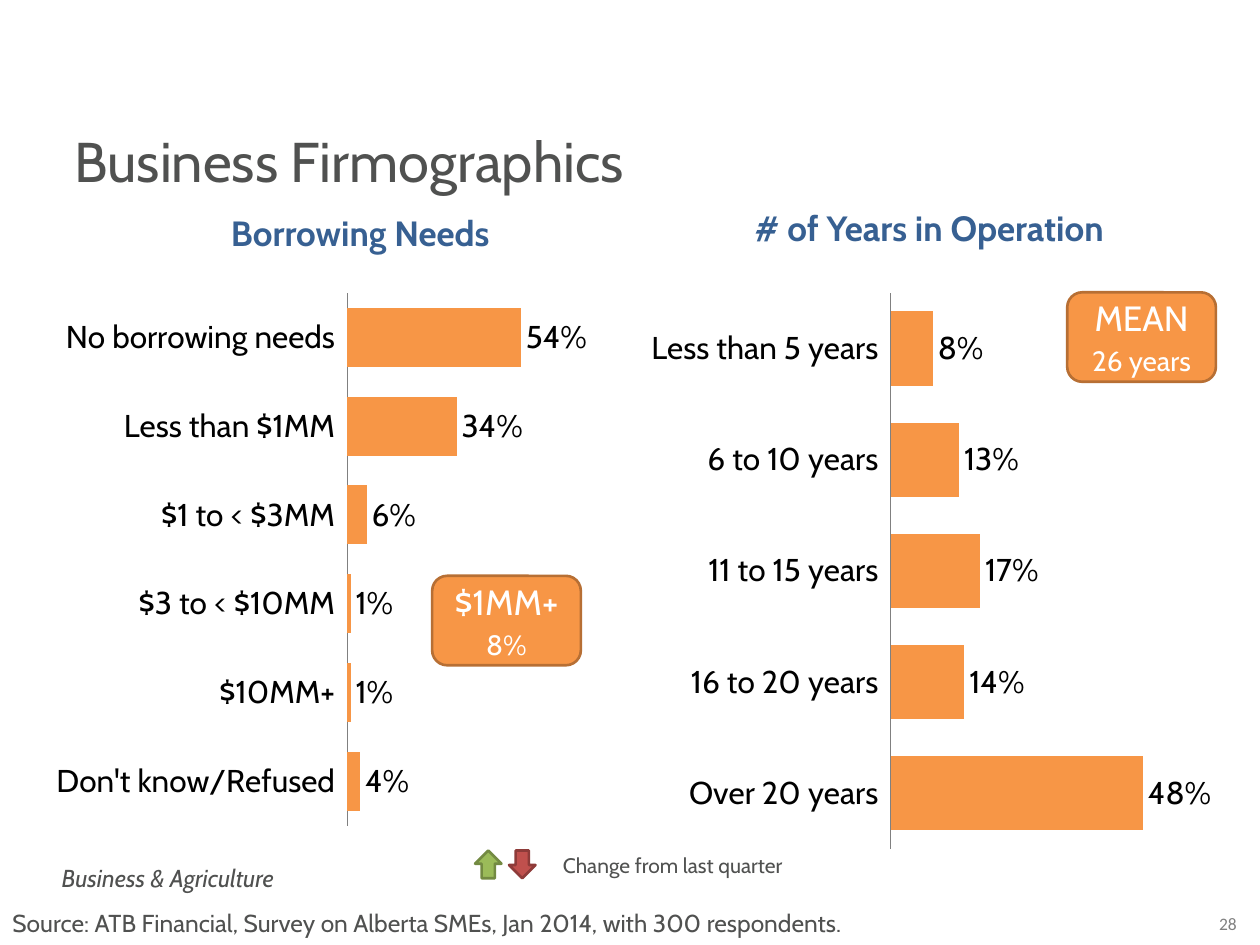
from lxml import etree
from pptx import Presentation
from pptx.chart.data import CategoryChartData
from pptx.dml.color import RGBColor
from pptx.enum.chart import XL_CHART_TYPE, XL_LABEL_POSITION, XL_TICK_LABEL_POSITION, XL_TICK_MARK
from pptx.enum.shapes import MSO_SHAPE
from pptx.enum.text import MSO_ANCHOR, PP_ALIGN
from pptx.oxml.ns import qn
from pptx.util import Inches, Pt

LEFT, CENTER = PP_ALIGN.LEFT, PP_ALIGN.CENTER
TOP, MIDDLE = MSO_ANCHOR.TOP, MSO_ANCHOR.MIDDLE
BAR_CLUSTERED = XL_CHART_TYPE.BAR_CLUSTERED
OUTSIDE_END = XL_LABEL_POSITION.OUTSIDE_END
NO_TICKS = XL_TICK_MARK.NONE
LABELS_LOW = XL_TICK_LABEL_POSITION.LOW

FONT = "Cabin"
GREY, BLUE, ORANGE, WHITE = "505150", "376092", "F79646", "FFFFFF"

TITLE = ("Business Firmographics", (0.49, 0.95, 5.84, 0.64))

# plot: left, top, width and height as shares of the chart
CHARTS = [
    {"place": (4.15, 2.32, 5.84, 4.6), "plot": (0.5, 0, 0.5, 0.96),
     "rows": [("Less than 5 years", 0.08), ("6 to 10 years", 0.13),
              ("11 to 15 years", 0.17), ("16 to 20 years", 0.14),
              ("Over 20 years", 0.48)]},
    {"place": (0.42, 2.32, 4.25, 4.41), "plot": (0.55, 0, 0.42, 0.96),
     "rows": [("No borrowing needs", 0.54), ("Less than $1MM", 0.34),
              ("$1 to < $3MM", 0.06), ("$3 to < $10MM", 0.01),
              ("$10MM+", 0.01), ("Don't know/Refused", 0.04)]},
]

TEXTS = [
    ("Borrowing Needs", (1.58, 1.63, 2.56, 0.44),
     {"size": 20, "color": BLUE, "bold": True, "align": CENTER}),
    ("# of Years in Operation", (5.58, 1.59, 3.59, 0.44),
     {"size": 20, "color": BLUE, "bold": True, "align": CENTER}),
    ("Business & Agriculture", (0.39, 6.8, 2.81, 0.34), {"size": 14, "italic": True}),
    ("Source: ATB Financial, Survey on Alberta SMEs, Jan 2014, with 300 respondents.",
     (0, 7.16, 7.09, 0.34), {"size": 14}),
    ("Change from last quarter", (4.37, 6.72, 2.4, 0.31), {"size": 12}),
    ("28", (9.5, 7.2, 0.49, 0.27),
     {"size": 10, "font": "Calibri", "color": "808080", "align": CENTER}),
]

CALLOUTS = [("$1MM+", "8%", 3.43, 4.57), ("MEAN", "26 years", 8.47, 2.32)]
CALLOUT_SIZE = (1.18, 0.71)

ARROWS = [
    (MSO_SHAPE.UP_ARROW, 3.77, "9BBB59", "738A42"),
    (MSO_SHAPE.DOWN_ARROW, 4.04, "C0504D", "8E3B39"),
]


def rgb(color):
    return RGBColor.from_string(color)


def inches(place):
    return [Inches(length) for length in place]


def write(paragraph, text, size=14, font=FONT, color=GREY, bold=False,
          italic=False, align=LEFT, before=0):
    paragraph.alignment = align
    paragraph.space_before = Pt(before)
    span = paragraph.add_run()
    span.text = text
    span.font.size = Pt(size)
    span.font.name = font
    span.font.color.rgb = rgb(color)
    span.font.bold = bold
    span.font.italic = italic


def add_text(page, text, place, **style):
    frame = page.shapes.add_textbox(*inches(place)).text_frame
    frame.word_wrap = True
    write(frame.paragraphs[0], text, **style)


def add_outlined(page, kind, place, fill, line):
    shape = page.shapes.add_shape(kind, *inches(place))
    shape.shadow.inherit = False
    shape.fill.solid()
    shape.fill.fore_color.rgb = rgb(fill)
    shape.line.color.rgb = rgb(line)
    shape.line.width = Pt(1.5)
    return shape


def add_callout(page, heading, value, left, top):
    box = add_outlined(page, MSO_SHAPE.ROUNDED_RECTANGLE,
                       (left, top, *CALLOUT_SIZE), ORANGE, "B76F34")
    frame = box.text_frame
    frame.vertical_anchor = MIDDLE
    write(frame.paragraphs[0], heading, size=20, color=WHITE, align=CENTER)
    write(frame.add_paragraph(), value, size=16, color=WHITE, align=CENTER, before=3)


def place_plot(chart, plot):
    """Fix the inner plot area, which python-pptx cannot position itself."""
    area = chart._chartSpace.find(".//" + qn("c:plotArea"))
    for old in area.findall(qn("c:layout")):
        area.remove(old)
    layout = etree.Element(qn("c:layout"))
    manual = etree.SubElement(layout, qn("c:manualLayout"))
    settings = [("layoutTarget", "inner"), ("xMode", "edge"), ("yMode", "edge"),
                *zip("xywh", plot)]
    for name, value in settings:
        etree.SubElement(manual, qn("c:" + name)).set("val", str(value))
    area.insert(0, layout)


def add_bars(page, place, plot, rows):
    data = CategoryChartData(number_format="0%")
    data.categories = [name for name, _ in rows]
    data.add_series("Series 1", [value for _, value in rows])
    chart = page.shapes.add_chart(BAR_CLUSTERED, *inches(place), data).chart
    chart.has_title = False
    chart.has_legend = False
    chart.font.name = FONT
    chart.font.size = Pt(18)
    chart.font.color.rgb = rgb("000000")

    categories = chart.category_axis
    categories.reverse_order = True
    categories.major_tick_mark = NO_TICKS
    categories.tick_label_position = LABELS_LOW
    categories.format.line.color.rgb = rgb("808080")
    values = chart.value_axis
    values.minimum_scale, values.maximum_scale = 0, 0.7
    values.has_major_gridlines = False
    values.visible = False

    bars = chart.plots[0]
    bars.gap_width = 50
    bars.vary_by_categories = False
    bars.series[0].format.fill.solid()
    bars.series[0].format.fill.fore_color.rgb = rgb(ORANGE)
    bars.has_data_labels = True
    labels = bars.data_labels
    labels.show_value = True
    labels.number_format = "0%"
    labels.number_format_is_linked = False
    labels.position = OUTSIDE_END
    place_plot(chart, plot)


def main():
    deck = Presentation()
    deck.slide_width, deck.slide_height = Inches(10), Inches(7.5)
    page = deck.slides.add_slide(deck.slide_layouts[5])

    text, place = TITLE
    title = page.shapes.title
    title.left, title.top, title.width, title.height = inches(place)
    title.text_frame.vertical_anchor = TOP
    write(title.text_frame.paragraphs[0], text, size=32)

    for chart in CHARTS:
        add_bars(page, **chart)
    for text, place, style in TEXTS:
        add_text(page, text, place, **style)
    for callout in CALLOUTS:
        add_callout(page, *callout)
    for kind, left, fill, line in ARROWS:
        add_outlined(page, kind, (left, 6.75, 0.21, 0.22), fill, line)

    deck.save("out.pptx")


if __name__ == "__main__":
    main()
